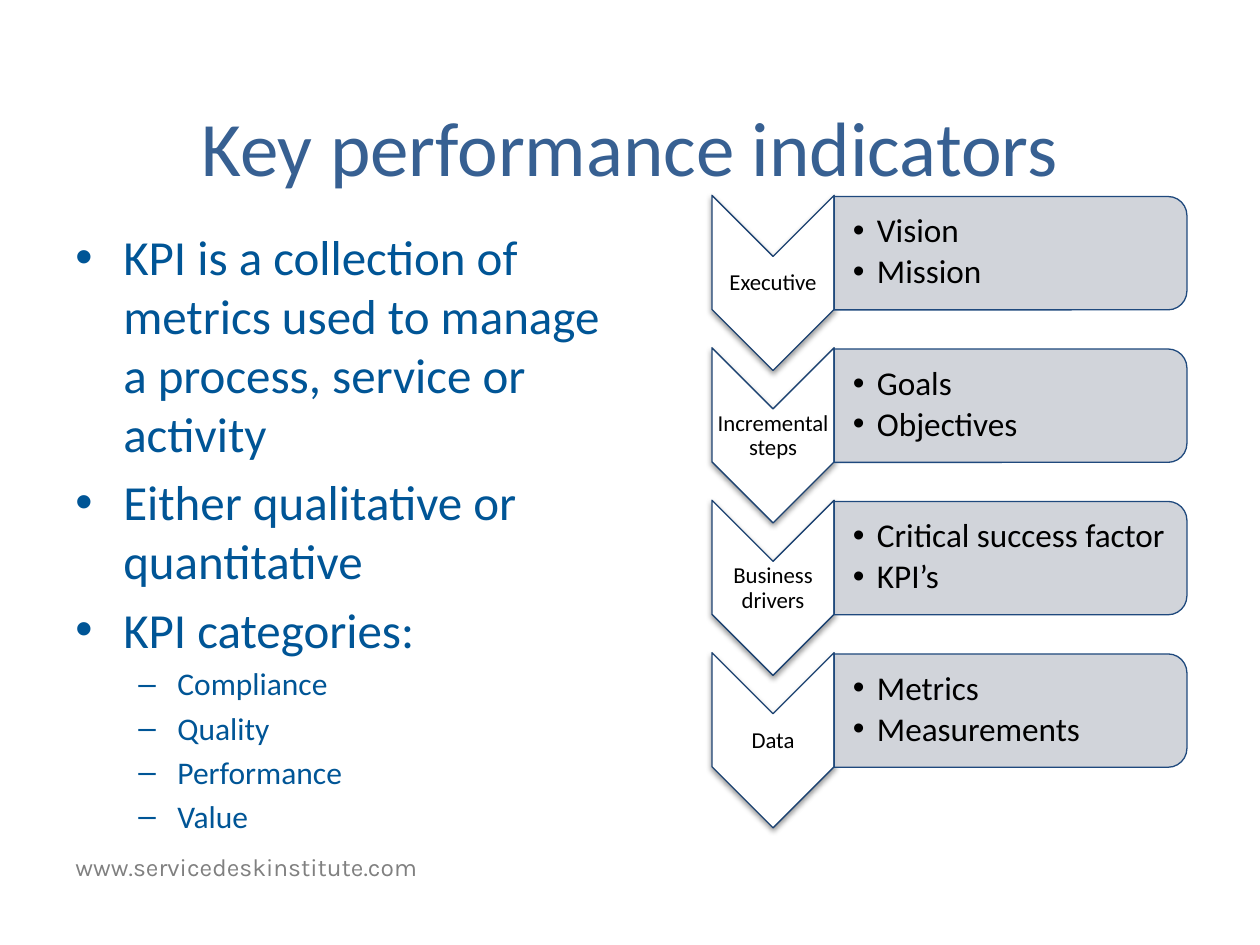
from typing import NamedTuple

from lxml.etree import SubElement
from pptx import Presentation
from pptx.dml.color import RGBColor
from pptx.enum.shapes import MSO_SHAPE as Kind
from pptx.enum.text import MSO_ANCHOR as Anchor, PP_ALIGN as Align
from pptx.oxml.ns import qn
from pptx.util import Inches, Pt


class Box(NamedTuple):
    left: float
    top: float
    width: float
    height: float

    def down(self, gap: float) -> "Box":
        return self._replace(top=self.top + gap)


class Style(NamedTuple):
    size: float
    color: str
    font: str = "Calibri"


class Bullet(NamedTuple):
    mark: str
    left: float
    hang: float
    level: int = 0


class Stage(NamedTuple):
    label: str
    items: list[str]


PITCH = 1.21
CHEVRON = Box(5.44, 1.76, 1.39, 0.97)
LABEL = Box(5.65, 2.04, 0.97, 0.42)
BAR = Box(7.57, 0.61, 0.9, 2.8)
ITEMS = Box(6.62, 1.6, 2.76, 0.81)

DOT = Bullet("•", 0.38, 0.38)
DASH = Bullet("–", 0.81, 0.31, 1)
SMALL = Bullet("•", 0.19, 0.19, 1)

MAIN = Style(28, "005596")
SUB = Style(18, "005596")
TAG = Style(13, "000000")
ITEM = Style(19, "000000")

POINTS = [
    "KPI is a collection of metrics used to manage a process, service or activity",
    "Either qualitative or quantitative",
    "KPI categories:",
]
TYPES = ["Compliance", "Quality", "Performance", "Value"]
STAGES = [
    Stage("Executive", ["Vision", "Mission"]),
    Stage("Incremental steps", ["Goals", "Objectives"]),
    Stage("Business drivers", ["Critical success factor", "KPI’s"]),
    Stage("Data", ["Metrics", "Measurements"]),
]


def paint(target, color: str) -> None:
    """Set the colour of a font, or of a fill or line already solid."""
    spot = target.color if hasattr(target, "color") else target.fore_color
    spot.rgb = RGBColor.from_string(color)


def place(box: Box) -> list[int]:
    return [Inches(side) for side in box]


def add_frame(slide, box: Box, anchor=Anchor.TOP, pads=(0.1, 0.05, 0.1, 0.05)):
    frame = slide.shapes.add_textbox(*place(box)).text_frame
    frame.word_wrap = True
    frame.vertical_anchor = anchor
    (frame.margin_left, frame.margin_top,
     frame.margin_right, frame.margin_bottom) = [Inches(pad) for pad in pads]
    return frame


def write(para, text: str, style: Style, align=Align.LEFT) -> None:
    para.text = text
    para.alignment = align
    for run in para.runs:
        run.font.name = style.font
        run.font.size = Pt(style.size)
        paint(run.font, style.color)


def set_bullet(para, bullet: Bullet) -> None:
    para.level = bullet.level
    props = para._p.get_or_add_pPr()
    props.set("marL", str(Inches(bullet.left)))
    props.set("indent", str(-Inches(bullet.hang)))
    SubElement(props, qn("a:buFont"), typeface="Arial")
    SubElement(props, qn("a:buChar"), char=bullet.mark)


def add_list(frame, rows: list[tuple[str, Style, Bullet]],
             before: float = 0, after: float = 0, lines: float = 1) -> None:
    """Fill a frame with bullets; gaps are shares of the text size."""
    for i, (text, style, bullet) in enumerate(rows):
        para = frame.add_paragraph() if i else frame.paragraphs[0]
        set_bullet(para, bullet)
        write(para, text, style)
        para.line_spacing = lines
        para.space_before = Pt(style.size * before if i else 0)
        para.space_after = Pt(style.size * after)


def add_form(slide, kind: Kind, box: Box, fill: str, line: str):
    form = slide.shapes.add_shape(kind, *place(box))
    form.rotation = 90
    form.shadow.inherit = False
    form.fill.solid()
    paint(form.fill, fill)
    paint(form.line, line)
    form.line.width = Pt(0.75)
    return form


def add_shade(form) -> None:
    """Give a shape a soft shadow below it."""
    effects = form._element.spPr.find(qn("a:effectLst"))
    shade = SubElement(effects, qn("a:outerShdw"), blurRad=str(Pt(3.1)),
                       dist=str(Pt(1.6)), dir="5400000", rotWithShape="0")
    tone = SubElement(shade, qn("a:srgbClr"), val="000000")
    SubElement(tone, qn("a:alpha"), val="38000")


def set_alpha(form, percent: int) -> None:
    tone = form._element.spPr.find(qn("a:solidFill")).find(qn("a:srgbClr"))
    SubElement(tone, qn("a:alpha"), val=str(percent * 1000))


def add_stage(slide, stage: Stage, gap: float) -> None:
    add_shade(add_form(slide, Kind.CHEVRON, CHEVRON.down(gap), "FFFFFF", "1C4271"))
    label = add_frame(slide, LABEL.down(gap), Anchor.MIDDLE, (0.01,) * 4)
    write(label.paragraphs[0], stage.label, TAG, Align.CENTER)
    label.paragraphs[0].line_spacing = 0.9

    bar = add_form(slide, Kind.ROUND_2_SAME_RECTANGLE, BAR.down(gap), "CDD0D7", "1F497D")
    set_alpha(bar, 90)
    items = add_frame(slide, ITEMS.down(gap), Anchor.MIDDLE, (0.15, 0.01, 0.01, 0.01))
    add_list(items, [(text, ITEM, SMALL) for text in stage.items], after=0.15, lines=0.9)


def main() -> None:
    deck = Presentation()
    deck.slide_width, deck.slide_height = Inches(10), Inches(7.5)
    slide = deck.slides.add_slide(deck.slide_layouts[6])

    site = add_frame(slide, Box(0.5, 6.71, 6.74, 0.34))
    write(site.paragraphs[0], "www.servicedeskinstitute.com", Style(14, "808080", "Karla"))
    title = add_frame(slide, Box(0.5, 0.53, 9, 1.25), Anchor.MIDDLE)
    write(title.paragraphs[0], "Key performance indicators", Style(44, "376092"), Align.CENTER)

    body = add_frame(slide, Box(0.5, 1.75, 4.42, 4.95))
    rows = [(text, MAIN, DOT) for text in POINTS] + [(text, SUB, DASH) for text in TYPES]
    add_list(body, rows, before=0.2)

    for i, stage in enumerate(STAGES):
        add_stage(slide, stage, i * PITCH)
    deck.save("out.pptx")


if __name__ == "__main__":
    main()
